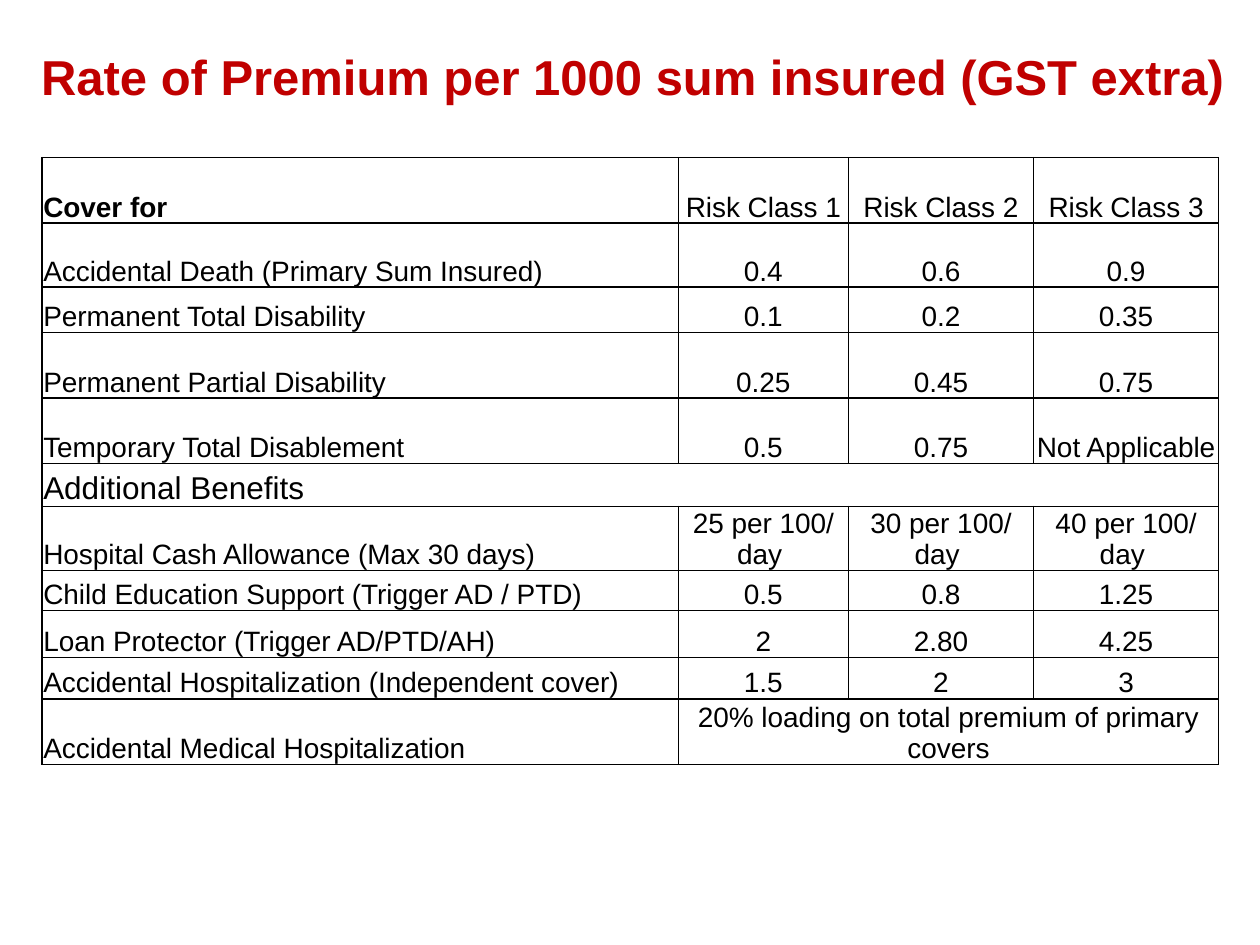
import pptx
import pptx.util
import pptx.dml.color
import pptx.enum.text
import pptx.oxml
import pptx.oxml.ns

Pt = pptx.util.Pt
ALIGN = pptx.enum.text.PP_ALIGN
ANCHOR = pptx.enum.text.MSO_ANCHOR

TITLE = "Rate of Premium per 1000 sum insured (GST extra)"
COLORS = {"title": "C00000", "text": "000000", "border": "000000"}
COLUMN_WIDTHS = [363.6, 97.2, 105.8, 105.8]
ROWS = [
    (37.5, ["Cover for", "Risk Class 1", "Risk Class 2", "Risk Class 3"]),
    (36.5, ["Accidental Death (Primary Sum Insured)", "0.4", "0.6", "0.9"]),
    (26, ["Permanent Total Disability", "0.1", "0.2", "0.35"]),
    (37.5, ["Permanent Partial Disability", "0.25", "0.45", "0.75"]),
    (37.5, ["Temporary Total Disablement", "0.5", "0.75", "Not Applicable "]),
    (24.5, ["Additional Benefits"]),
    (36.5, ["Hospital Cash Allowance (Max 30 days)",
            "25 per 100/ day ", "30 per 100/ day ", "40 per 100/ day "]),
    (23, ["Child Education Support (Trigger AD / PTD)", "0.5", "0.8", "1.25"]),
    (27, ["Loan Protector (Trigger AD/PTD/AH)", "2", "2.80", "4.25"]),
    (23.5, ["Accidental Hospitalization (Independent cover)", "1.5", "2", "3"]),
    (37.5, ["Accidental Medical Hospitalization",
            "20% loading on total premium of primary covers"]),
]


def write(tf, text, size=16, bold=False, color="text", align=ALIGN.LEFT):
    p = tf.paragraphs[0]
    p.alignment = align
    r = p.add_run()
    r.text = text
    r.font.name = "Arial"
    r.font.size = Pt(size)
    r.font.bold = bold
    r.font.color.rgb = pptx.dml.color.RGBColor.from_string(COLORS[color])


def format_cell(cell):
    cell.margin_left = cell.margin_top = cell.margin_right = Pt(0.72)
    cell.margin_bottom = 0
    cell.vertical_anchor = ANCHOR.BOTTOM
    cell.fill.background()
    props = cell._tc.get_or_add_tcPr()
    for i, side in enumerate(("lnL", "lnR", "lnT", "lnB")):
        props.insert(i, pptx.oxml.parse_xml(
            f'<a:{side} {pptx.oxml.ns.nsdecls("a")} w="{Pt(1)}"><a:solidFill>'
            f'<a:srgbClr val="{COLORS["border"]}"/></a:solidFill></a:{side}>'))


def add_title(s):
    title = s.shapes.title
    title.left, title.top, title.width, title.height = Pt(0), Pt(14.4), Pt(720), Pt(57.6)
    tf = title.text_frame
    tf.margin_left, tf.margin_right = Pt(23.5), Pt(8)
    tf.vertical_anchor = ANCHOR.MIDDLE
    write(tf, TITLE, size=28, bold=True, color="title")


def add_rates(s):
    height = sum(h for h, _ in ROWS)
    table = s.shapes.add_table(len(ROWS), len(COLUMN_WIDTHS), Pt(24), Pt(90),
                               Pt(sum(COLUMN_WIDTHS)), Pt(height)).table
    table.first_row = table.horz_banding = False
    for column, width in zip(table.columns, COLUMN_WIDTHS):
        column.width = Pt(width)
    last = len(COLUMN_WIDTHS) - 1
    for i, (row_height, texts) in enumerate(ROWS):
        table.rows[i].height = Pt(row_height)
        for j in range(last + 1):
            format_cell(table.cell(i, j))
        if len(texts) <= last:
            table.cell(i, len(texts) - 1).merge(table.cell(i, last))
        for j, text in enumerate(texts):
            write(table.cell(i, j).text_frame, text,
                  size=18 if len(texts) == 1 else 16, bold=i == j == 0,
                  align=ALIGN.CENTER if j else ALIGN.LEFT)


def main():
    prs = pptx.Presentation()
    prs.slide_width, prs.slide_height = Pt(720), Pt(540)
    s = prs.slides.add_slide(prs.slide_layouts[5])
    add_title(s)
    add_rates(s)
    prs.save("out.pptx")


if __name__ == "__main__":
    main()
